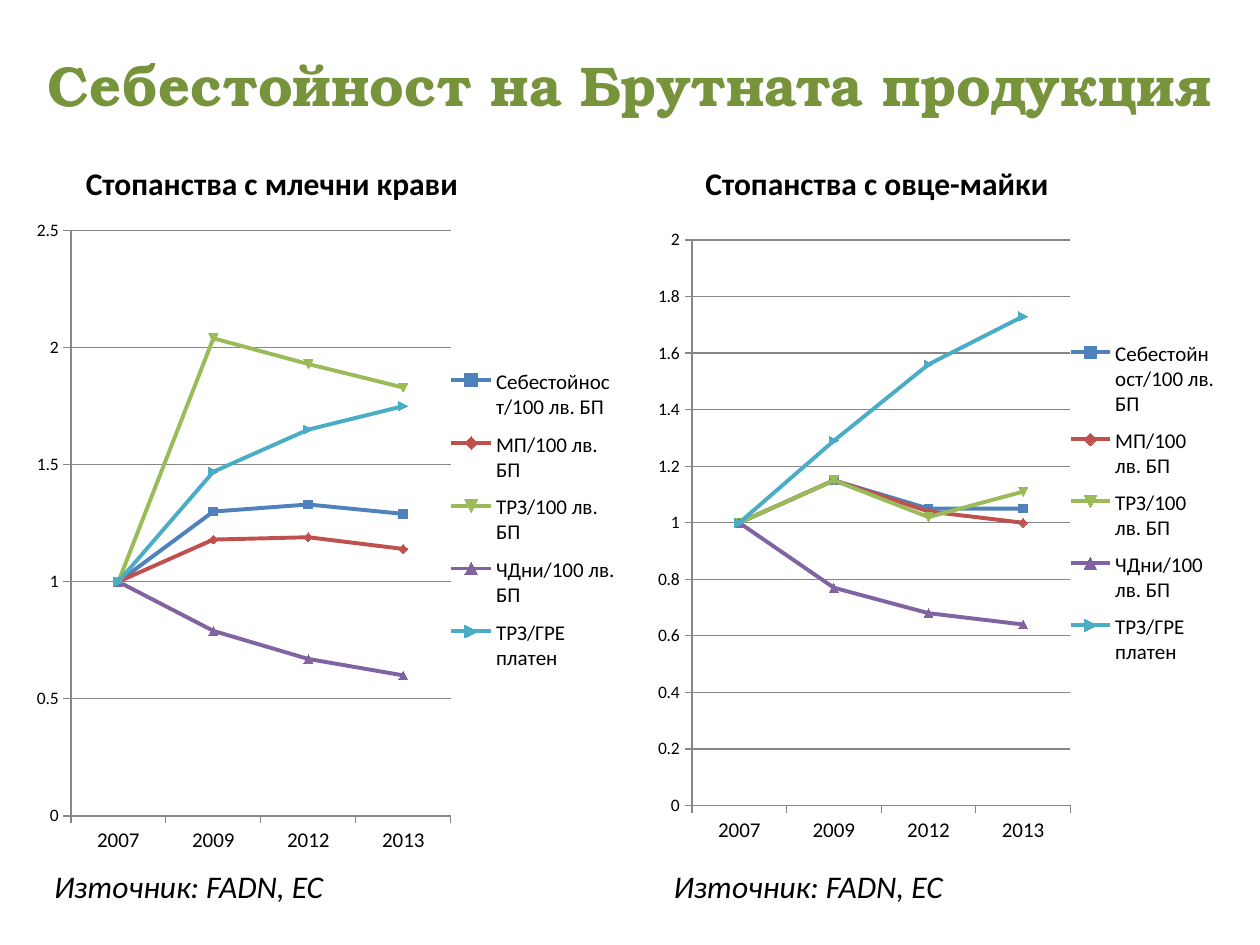
from lxml.etree import SubElement
from pptx import Presentation
from pptx.chart.data import CategoryChartData
from pptx.dml.color import RGBColor
from pptx.enum.chart import XL_CHART_TYPE as ChartType, XL_LEGEND_POSITION as LegendPosition
from pptx.enum.chart import XL_TICK_MARK as TickMark
from pptx.enum.text import MSO_ANCHOR as Anchor, PP_ALIGN as Align
from pptx.oxml.ns import qn
from pptx.util import Cm, Pt

BLACK = RGBColor(0x00, 0x00, 0x00)
GREEN = RGBColor(0x77, 0x93, 0x3C)
GREY = RGBColor(0x86, 0x86, 0x86)
SERIES_COLORS = [
    RGBColor(0x4F, 0x81, 0xBD),
    RGBColor(0xC0, 0x50, 0x4D),
    RGBColor(0x9B, 0xBB, 0x59),
    RGBColor(0x80, 0x64, 0xA2),
    RGBColor(0x4B, 0xAC, 0xC6),
]
BODY_FONT = "Calibri"
TITLE_FONT = "TeX Gyre Bonum"

YEARS = ["2007", "2009", "2012", "2013"]
INDICATORS = [
    "Себестойност/100 лв. БП",
    "МП/100 лв. БП",
    "ТРЗ/100 лв. БП",
    "ЧДни/100 лв. БП",
    "ТРЗ/ГРЕ платен",
]
COW_VALUES = [
    [1, 1.3, 1.33, 1.29],
    [1, 1.18, 1.19, 1.14],
    [1, 2.04, 1.93, 1.83],
    [1, 0.79, 0.67, 0.6],
    [1, 1.47, 1.65, 1.75],
]
SHEEP_VALUES = [
    [1, 1.15, 1.05, 1.05],
    [1, 1.15, 1.04, 1],
    [1, 1.15, 1.02, 1.11],
    [1, 0.77, 0.68, 0.64],
    [1, 1.29, 1.56, 1.73],
]


def add_text(slide, text, box, size=18, font=BODY_FONT, color=BLACK, bold=False,
             italic=False, align=Align.LEFT, anchor=Anchor.TOP, wrap=True):
    shape = slide.shapes.add_textbox(*(Cm(length) for length in box))
    frame = shape.text_frame
    frame.word_wrap = wrap
    frame.vertical_anchor = anchor
    paragraph = frame.paragraphs[0]
    paragraph.alignment = align
    run = paragraph.add_run()
    run.text = text
    run.font.size = Pt(size)
    run.font.name = font
    run.font.color.rgb = color
    run.font.bold = bold
    run.font.italic = italic


def set_layout(element, index, part_box, chart_box, inner=False):
    for old_layout in element.findall(qn("c:layout")):
        element.remove(old_layout)
    layout = SubElement(element, qn("c:layout"))
    element.insert(index, layout)
    manual = SubElement(layout, qn("c:manualLayout"))
    width, height = chart_box[2:]
    shares = [length / side for length, side in zip(part_box, (width, height) * 2)]
    settings = [("layoutTarget", "inner")] if inner else []
    settings += [("xMode", "edge"), ("yMode", "edge"), *zip("xywh", shares)]
    for name, value in settings:
        SubElement(manual, qn(f"c:{name}")).set("val", str(value))


def style_axis(axis, size):
    axis.major_tick_mark = TickMark.OUTSIDE
    axis.minor_tick_mark = TickMark.NONE
    axis.tick_labels.font.size = Pt(size)
    axis.format.line.color.rgb = GREY
    axis.format.line.width = Pt(0.75)


def add_line_chart(slide, box, values, plot_box, legend_box, maximum, step):
    data = CategoryChartData()
    data.categories = YEARS
    for name, numbers in zip(INDICATORS, values):
        data.add_series(name, numbers)
    frame = slide.shapes.add_chart(
        ChartType.LINE_MARKERS, *(Cm(length) for length in box), data)
    chart = frame.chart
    chart.has_title = False
    chart.font.name = BODY_FONT
    chart.font.size = Pt(10)
    chart.font.color.rgb = BLACK
    chart.has_legend = True
    legend = chart.legend
    legend.position = LegendPosition.RIGHT
    legend.include_in_layout = False
    legend.font.size = Pt(12)
    set_layout(chart._chartSpace.chart.plotArea, 0, plot_box, box, inner=True)
    set_layout(legend._element, 1, legend_box, box)

    style_axis(chart.category_axis, 12)
    value_axis = chart.value_axis
    style_axis(value_axis, 10)
    value_axis.minimum_scale = 0
    value_axis.maximum_scale = maximum
    value_axis.major_unit = step
    value_axis.has_major_gridlines = True
    gridline = value_axis.major_gridlines.format.line
    gridline.color.rgb = GREY
    gridline.width = Pt(0.75)

    plot = chart.plots[0]
    plot.vary_by_categories = False
    for series, color in zip(plot.series, SERIES_COLORS):
        series.smooth = False
        series.format.line.color.rgb = color
        series.format.line.width = Pt(2.25)
        series.marker.format.fill.solid()
        series.marker.format.fill.fore_color.rgb = color
        series.marker.format.line.color.rgb = color


def add_farm_panel(slide, box, heading, chart_top, chart_height, **chart_options):
    left, top, width, height = box
    add_line_chart(slide, (left, top + chart_top, width, chart_height), **chart_options)
    add_text(slide, heading, (left + 1.06, top, 8.1, 1.02), bold=True, wrap=False)
    add_text(slide, "Източник: FADN, EC", (left + 0.42, top + height - 1.02, 9.5, 1.02),
             italic=True)


def main():
    presentation = Presentation()
    presentation.slide_width = Cm(25.4)
    presentation.slide_height = Cm(19.05)
    slide = presentation.slides.add_slide(presentation.slide_layouts[6])
    add_text(slide, "Себестойност на Брутната продукция", (0, 0, 25.4, 3.38), size=32,
             font=TITLE_FONT, color=GREEN, bold=True, align=Align.CENTER,
             anchor=Anchor.MIDDLE)
    add_farm_panel(slide, (0.42, 3.18, 12.28, 15.2), "Стопанства с млечни крави",
                   chart_top=1.06, chart_height=13.12, values=COW_VALUES,
                   plot_box=(1.01, 0.41, 7.66, 11.8), legend_box=(8.85, 2.95, 3.3, 6.6),
                   maximum=2.5, step=0.5)
    add_farm_panel(slide, (12.91, 3.18, 11.85, 15.2), "Стопанства с овце-майки",
                   chart_top=1.27, chart_height=12.7, values=SHEEP_VALUES,
                   plot_box=(1.04, 0.39, 7.63, 11.4), legend_box=(8.83, 2.2, 2.95, 7),
                   maximum=2, step=0.2)
    presentation.save("out.pptx")


if __name__ == "__main__":
    main()
